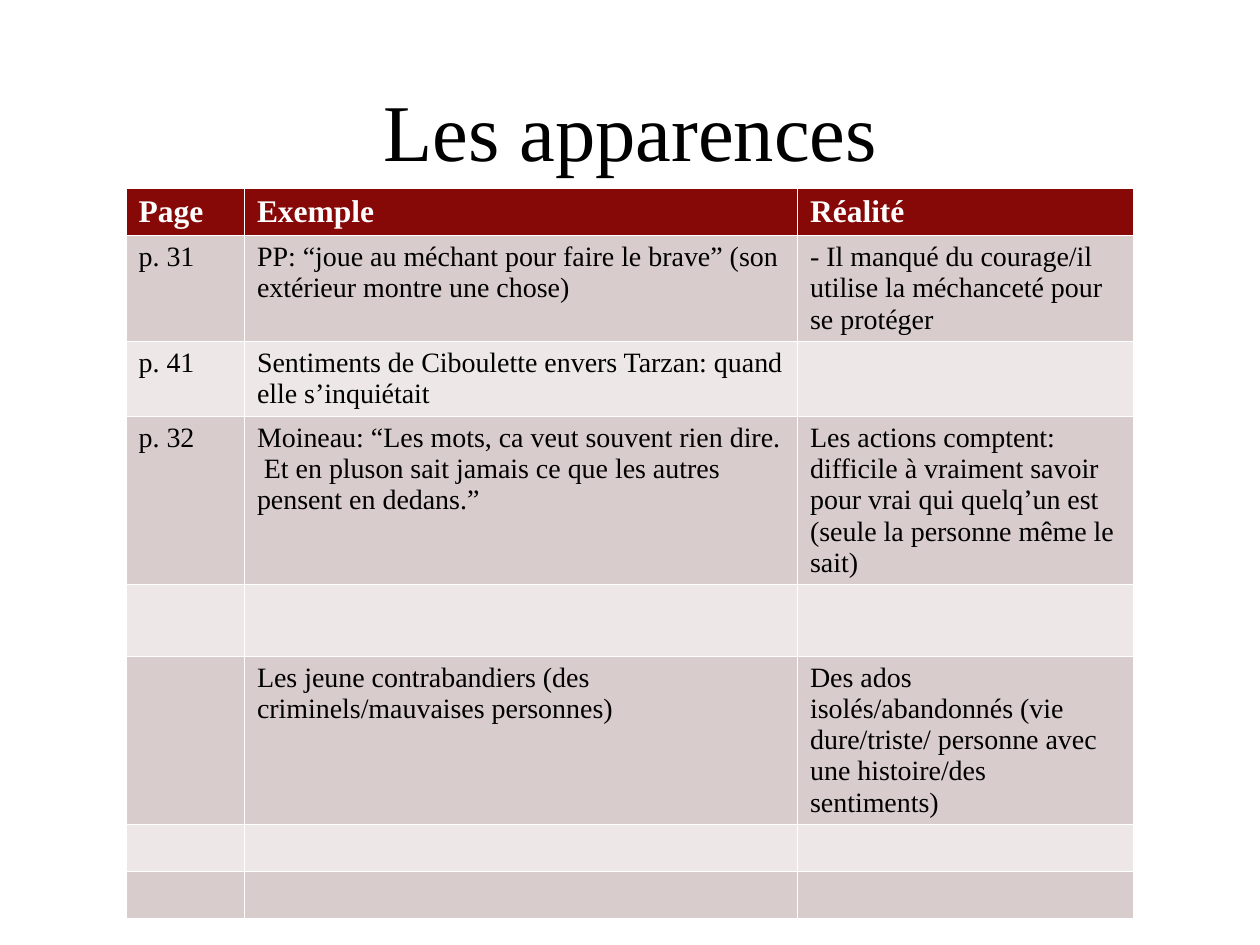
from pptx import Presentation
from pptx.dml.color import RGBColor
from pptx.enum.text import MSO_ANCHOR, PP_ALIGN
from pptx.util import Inches, Pt

HEAD, DARK, LIGHT = "860908", "D9CCCC", "EDE7E7"
COLS = [0.094, 0.439, 0.267]
ROWS = [
    (0.05, ["Page", "Exemple", "Réalité"]),
    (0.112, ["p. 31",
             "PP: “joue au méchant pour faire le brave” (son extérieur montre une chose)",
             "- Il manqué du courage/il utilise la méchanceté pour se protéger"]),
    (0.079, ["p. 41",
             "Sentiments de Ciboulette envers Tarzan: quand elle s’inquiétait", ""]),
    (0.178, ["p. 32",
             "Moineau: “Les mots, ca veut souvent rien dire.  Et en pluson sait jamais "
             "ce que les autres pensent en dedans.”",
             "Les actions comptent: difficile à vraiment savoir pour vrai qui quelq’un est "
             "(seule la personne même le sait)"]),
    (0.076, ["", "", ""]),
    (0.178, ["", "Les jeune contrabandiers (des criminels/mauvaises personnes)",
             "Des ados isolés/abandonnés (vie dure/triste/ personne avec une histoire/des "
             "sentiments)"]),
    (0.05, ["", "", ""]),
    (0.05, ["", "", ""]),
]


def paint(code):
    """Turn a hex string into a colour."""
    return RGBColor.from_string(code)


class Deck:
    """Hold the style and the current slide."""

    def __init__(self, wide, high, face):
        """Start a deck with one title-only slide."""
        self.file = Presentation()
        self.file.slide_width = self.wide = Inches(wide)
        self.file.slide_height = self.high = Inches(high)
        self.face = face
        self.slide = self.file.slides.add_slide(self.file.slide_layouts[5])

    def box(self, left, top, wide, high):
        """Turn shares of the slide into lengths."""
        return (int(left * self.wide), int(top * self.high),
                int(wide * self.wide), int(high * self.high))

    def style(self, para, size, code, bold=False):
        """Set the font of a paragraph."""
        font = para.font
        font.name, font.size, font.bold = self.face, Pt(size), bold
        font.color.rgb = paint(code)

    def title(self, text, area, size):
        """Place and format the title."""
        shape = self.slide.shapes.title
        shape.left, shape.top, shape.width, shape.height = self.box(*area)
        frame = shape.text_frame
        frame.text = text
        frame.vertical_anchor = MSO_ANCHOR.MIDDLE
        frame.paragraphs[0].alignment = PP_ALIGN.CENTER
        self.style(frame.paragraphs[0], size, "000000")

    def table(self, left, top, cols, rows):
        """Draw a table with a header and banded rows."""
        area = self.box(left, top, sum(cols), sum(share for share, _ in rows))
        grid = self.slide.shapes.add_table(len(rows), len(cols), *area).table
        for col, share in zip(grid.columns, cols):
            col.width = int(share * self.wide)
        for at, (share, texts) in enumerate(rows):
            grid.rows[at].height = int(share * self.high)
            back = HEAD if at == 0 else DARK if at % 2 else LIGHT
            for cell, text in zip(grid.rows[at].cells, texts):
                cell.text = text
                cell.fill.solid()
                cell.fill.fore_color.rgb = paint(back)
                look = (18, "FFFFFF", True) if at == 0 else (16, "000000")
                self.style(cell.text_frame.paragraphs[0], *look)


def main():
    """Build the slide and save it."""
    deck = Deck(10, 7.5, "Times New Roman")
    deck.title("Les apparences", (0.1, 0.073, 0.8, 0.127), 46)
    deck.table(0.1, 0.199, COLS, ROWS)
    deck.file.save("out.pptx")


if __name__ == "__main__":
    main()
